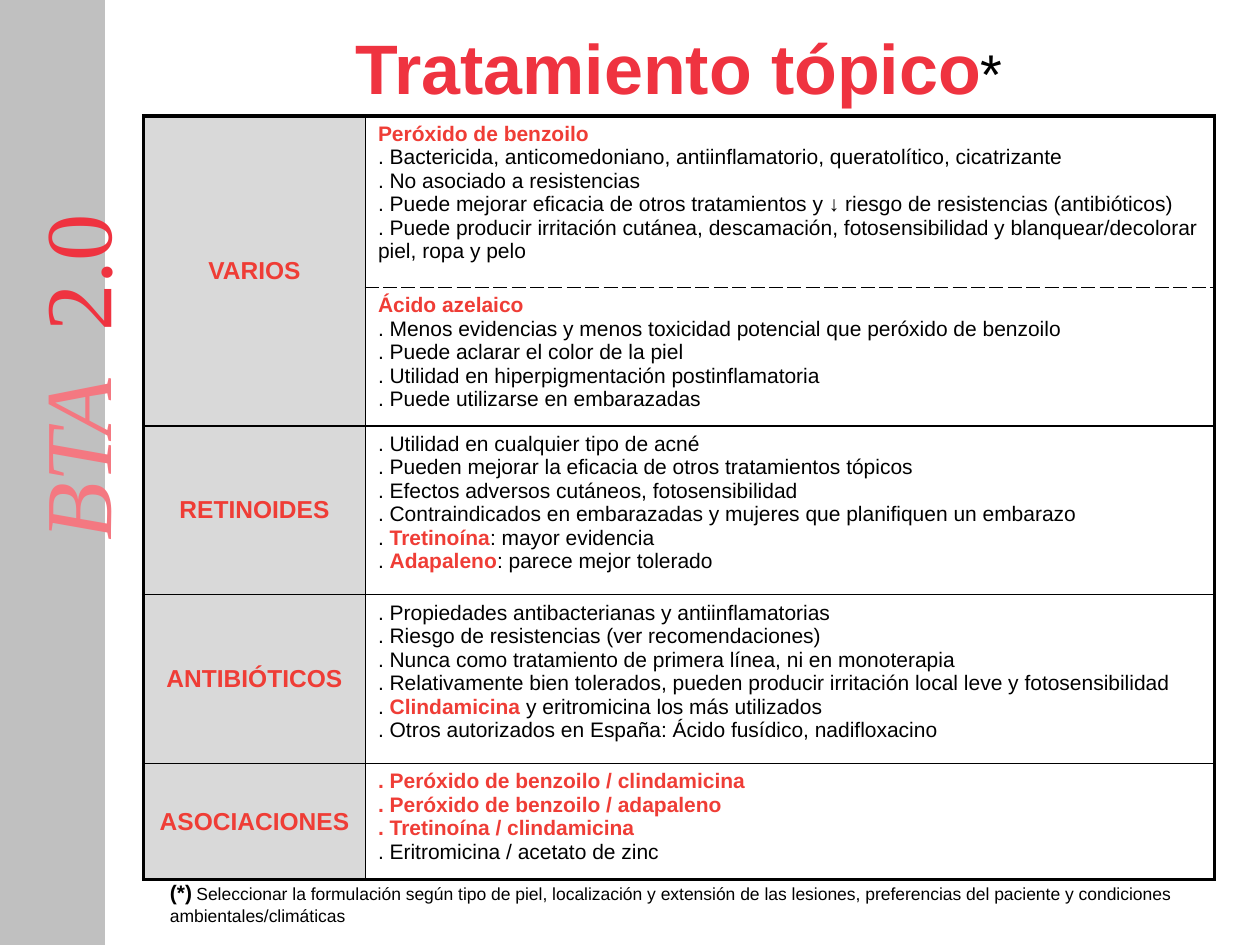
from typing import NamedTuple

from lxml.etree import SubElement
from pptx import Presentation
from pptx.dml.color import RGBColor
from pptx.enum.shapes import MSO_SHAPE as Shape
from pptx.enum.text import MSO_ANCHOR as Anchor, MSO_AUTO_SIZE as AutoSize, PP_ALIGN as Align
from pptx.oxml.ns import qn
from pptx.util import Inches, Pt

RED, LABEL_RED, PALE_RED = "EF3340", "EF3D36", "F47881"
BLACK, WHITE, SIDEBAR_GRAY, LABEL_GRAY = "000000", "FFFFFF", "C0C0C0", "D9D9D9"
THIN, THICK = 1, 2.25
COLUMN_WIDTHS = [1.76, 6.74]


class TextPart(NamedTuple):
    text: str
    size: float
    color: str = BLACK
    bold: bool = False
    italic: bool = False
    font: str = "Arial"
    spacing: float = 0


class TreatmentRow(NamedTuple):
    label: str  # an empty label continues the cell above
    height: float
    lines: list[str]  # red bold words stand between double asterisks


ROWS = [
    TreatmentRow("VARIOS", 1.36, [
        "**Peróxido de benzoilo**",
        ". Bactericida, anticomedoniano, antiinflamatorio, queratolítico, cicatrizante",
        ". No asociado a resistencias",
        ". Puede mejorar eficacia de otros tratamientos y ↓ riesgo de resistencias (antibióticos)",
        ". Puede producir irritación cutánea, descamación, fotosensibilidad y "
        "blanquear/decolorar piel, ropa y pelo",
    ]),
    TreatmentRow("", 0.92, [
        "**Ácido azelaico**",
        ". Menos evidencias y menos toxicidad potencial que peróxido de benzoilo",
        ". Puede aclarar el color de la piel",
        ". Utilidad en hiperpigmentación postinflamatoria",
        ". Puede utilizarse en embarazadas",
    ]),
    TreatmentRow("RETINOIDES", 1.34, [
        ". Utilidad en cualquier tipo de acné",
        ". Pueden mejorar la eficacia de otros tratamientos tópicos",
        ". Efectos adversos cutáneos, fotosensibilidad",
        ". Contraindicados en embarazadas y mujeres que planifiquen un embarazo",
        ". **Tretinoína**: mayor evidencia",
        ". **Adapaleno**: parece mejor tolerado",
    ]),
    TreatmentRow("ANTIBIÓTICOS", 1.34, [
        ". Propiedades antibacterianas y antiinflamatorias",
        ". Riesgo de resistencias (ver recomendaciones)",
        ". Nunca como tratamiento de primera línea, ni en monoterapia",
        ". Relativamente bien tolerados, pueden producir irritación local leve y fotosensibilidad",
        ". **Clindamicina** y eritromicina los más utilizados",
        ". Otros autorizados en España: Ácido fusídico, nadifloxacino",
    ]),
    TreatmentRow("ASOCIACIONES", 0.92, [
        "**. Peróxido de benzoilo / clindamicina**",
        "**. Peróxido de benzoilo / adapaleno**",
        "**. Tretinoína / clindamicina**",
        ". Eritromicina / acetato de zinc",
    ]),
]


def rgb(color: str) -> RGBColor:
    return RGBColor.from_string(color)


def add_parts(paragraph, parts: list[TextPart]) -> None:
    for part in parts:
        run = paragraph.add_run()
        run.text = part.text
        font = run.font
        font.name, font.size = part.font, Pt(part.size)
        font.bold, font.italic = part.bold, part.italic
        font.color.rgb = rgb(part.color)
        if part.spacing:
            run._r.get_or_add_rPr().set("spc", str(int(part.spacing * 100)))


def add_text(slide, left, top, width, height, parts: list[TextPart]):
    box = slide.shapes.add_textbox(Inches(left), Inches(top), Inches(width), Inches(height))
    box.text_frame.word_wrap = True
    add_parts(box.text_frame.paragraphs[0], parts)
    return box


def parse_line(line: str) -> list[TextPart]:
    return [TextPart(text, 12, LABEL_RED if i % 2 else BLACK, bool(i % 2))
            for i, text in enumerate(line.split("**")) if text]


def set_border(cell, side: str, width: float, dash: str = "solid") -> None:
    properties = cell._tc.get_or_add_tcPr()
    line = SubElement(properties, qn(f"a:ln{side}"), w=str(Pt(width)))
    fill = SubElement(line, qn("a:solidFill"))
    SubElement(fill, qn("a:srgbClr"), val=BLACK)
    SubElement(line, qn("a:prstDash"), val=dash)


def format_cell(table, row: int, column: int) -> None:
    cell = table.cell(row, column)
    last_row = len(ROWS) - 1
    # Dashes separate the two halves of a merged row
    continues = column == 1 and not ROWS[row].label
    continued = column == 1 and row < last_row and not ROWS[row + 1].label
    set_border(cell, "L", THICK if column == 0 else THIN)
    set_border(cell, "R", THICK if column == 1 else THIN)
    set_border(cell, "T", THICK if row == 0 else THIN, "sysDash" if continues else "solid")
    set_border(cell, "B", THICK if row == last_row else THIN, "sysDash" if continued else "solid")
    cell.fill.solid()
    cell.fill.fore_color.rgb = rgb(WHITE if column else LABEL_GRAY)


def add_treatment_table(slide) -> None:
    frame = slide.shapes.add_table(
        len(ROWS), 2, Inches(1.14), Inches(0.92),
        Inches(sum(COLUMN_WIDTHS)), Inches(sum(row.height for row in ROWS)))
    table = frame.table
    table.first_row = table.horz_banding = False
    for column, width in zip(table.columns, COLUMN_WIDTHS):
        column.width = Inches(width)
    for index, row in enumerate(ROWS):
        table.rows[index].height = Inches(row.height)
        label_cell, text_cell = table.cell(index, 0), table.cell(index, 1)
        for column in range(2):
            format_cell(table, index, column)
        if row.label:
            label_cell.vertical_anchor = Anchor.MIDDLE
            paragraph = label_cell.text_frame.paragraphs[0]
            paragraph.alignment = Align.CENTER
            add_parts(paragraph, [TextPart(row.label, 14, LABEL_RED, True)])
        else:
            table.cell(index - 1, 0).merge(label_cell)
        text_frame = text_cell.text_frame
        for number, line in enumerate(row.lines):
            paragraph = text_frame.add_paragraph() if number else text_frame.paragraphs[0]
            add_parts(paragraph, parse_line(line))


def add_sidebar(slide) -> None:
    bar = slide.shapes.add_shape(Shape.RECTANGLE, 0, 0, Inches(0.83), Inches(7.5))
    bar.shadow.inherit = False
    bar.fill.solid()
    bar.fill.fore_color.rgb = bar.line.color.rgb = rgb(SIDEBAR_GRAY)
    bar.line.width = Pt(0.75)
    serif = "Times New Roman"
    name = add_text(slide, -1.11, 2.27, 3.23, 1, [
        TextPart("BTA", 54, PALE_RED, italic=True, font=serif),
        TextPart(" ", 54, PALE_RED, italic=True, font=serif, spacing=13.5),
        TextPart("2.0", 54, RED, font=serif)])
    name.rotation = 270
    name.text_frame.margin_top = Inches(0.13)


def add_title(slide) -> None:
    title = slide.shapes.title
    title.left, title.top = Inches(1.08), Inches(0.13)
    title.width, title.height = Inches(8.62), Inches(0.79)
    title.text_frame.auto_size = AutoSize.NONE
    title.text_frame.vertical_anchor = Anchor.MIDDLE
    paragraph = title.text_frame.paragraphs[0]
    paragraph.alignment = Align.CENTER
    add_parts(paragraph, [TextPart("Tratamiento tópico", 40, RED, True), TextPart("*", 32)])


def main() -> None:
    presentation = Presentation()
    presentation.slide_width, presentation.slide_height = Inches(10), Inches(7.5)
    slide = presentation.slides.add_slide(presentation.slide_layouts[5])
    add_sidebar(slide)
    add_title(slide)
    add_treatment_table(slide)
    # Footnote
    footnote = add_text(slide, 1.25, 6.93, 8.39, 0.47, [
        TextPart("(*)", 12, bold=True),
        TextPart(" ", 9),
        TextPart("Seleccionar la formulación según tipo de piel, localización y extensión de las "
                 "lesiones, preferencias del paciente y condiciones ambientales/climáticas", 10)])
    footnote.text_frame.auto_size = AutoSize.SHAPE_TO_FIT_TEXT
    presentation.save("out.pptx")


if __name__ == "__main__":
    main()
